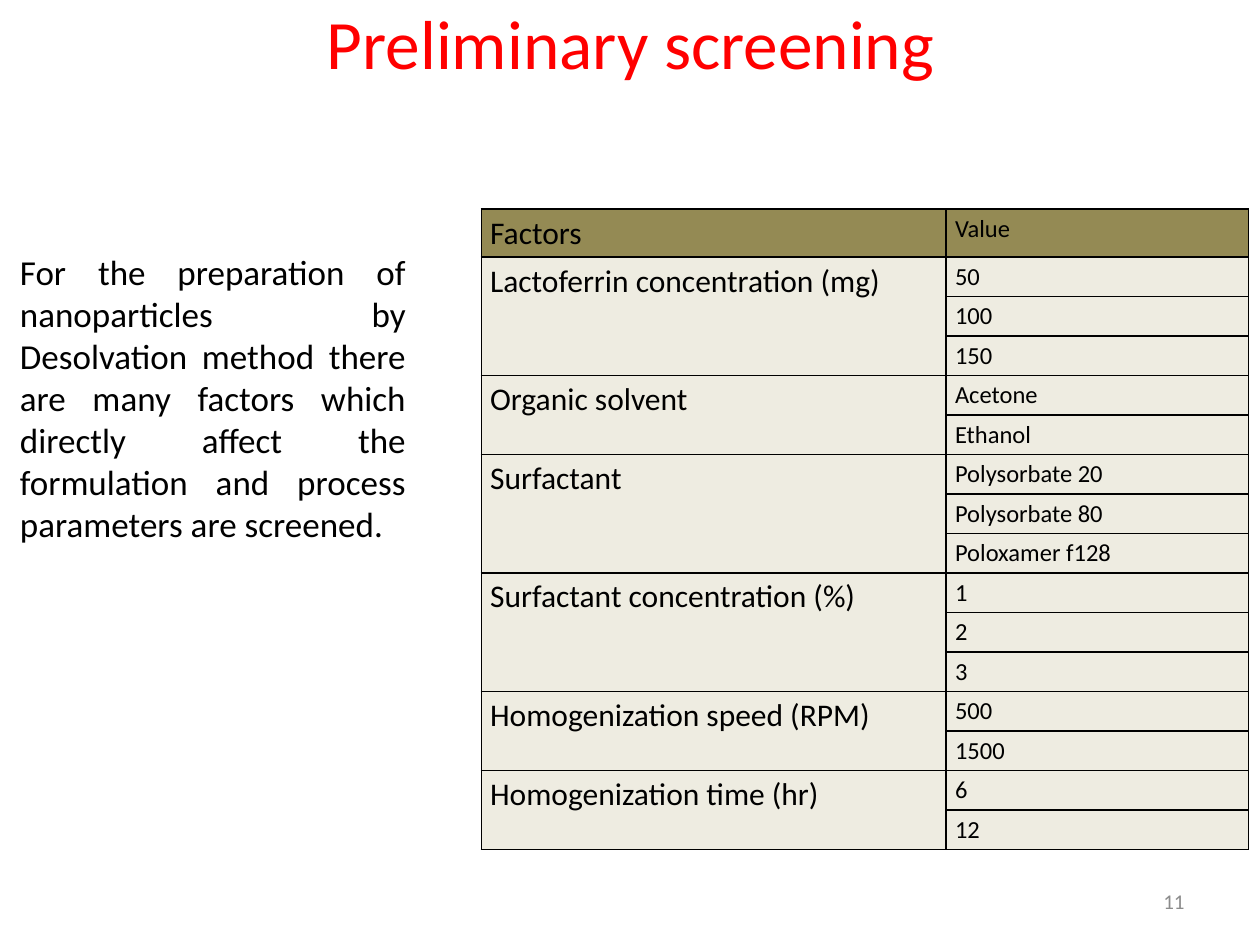
import pptx
import pptx.util
import pptx.dml.color
import pptx.enum.text
import pptx.oxml
import pptx.oxml.ns
from lxml import etree

Inches, Pt = pptx.util.Inches, pptx.util.Pt
RGBColor = pptx.dml.color.RGBColor
PP_ALIGN, MSO_ANCHOR = pptx.enum.text.PP_ALIGN, pptx.enum.text.MSO_ANCHOR
qn = pptx.oxml.ns.qn

RED = RGBColor(0xFF, 0x00, 0x00)
BLACK = RGBColor(0x00, 0x00, 0x00)
GREY = RGBColor(0x8C, 0x8C, 0x8C)
OLIVE = RGBColor(0x94, 0x8A, 0x54)
CREAM = RGBColor(0xEE, 0xEC, 0xE1)

COLS = [3.69, 2.4]
HEAD_ROW, ROW = 0.38, 0.31
FACTORS = [
    ("Lactoferrin concentration (mg)", ["50", "100", "150"]),
    ("Organic solvent", ["Acetone", "Ethanol"]),
    ("Surfactant", ["Polysorbate 20", "Polysorbate 80", "Poloxamer f128"]),
    ("Surfactant concentration (%)", ["1", "2", "3"]),
    ("Homogenization speed (RPM)", ["500", "1500"]),
    ("Homogenization time (hr)", ["6", "12"]),
]


def write(tf, text, size, color, align=PP_ALIGN.LEFT):
    tf.word_wrap = True
    p = tf.paragraphs[0]
    p.alignment = align
    r = p.add_run()
    r.text = text
    r.font.name = "Calibri"
    r.font.size = Pt(size)
    r.font.color.rgb = color


def style_cell(cell, fill):
    cell.margin_left = cell.margin_right = Inches(0.07)
    cell.margin_top = cell.margin_bottom = Inches(0.04)
    tcPr = cell._tc.get_or_add_tcPr()
    for side in ("a:lnL", "a:lnR", "a:lnT", "a:lnB"):
        ln = etree.SubElement(tcPr, qn(side), w=str(Pt(1)))
        solid = etree.SubElement(ln, qn("a:solidFill"))
        etree.SubElement(solid, qn("a:srgbClr"), val=str(BLACK))
    cell.fill.solid()
    cell.fill.fore_color.rgb = fill


prs = pptx.Presentation()
prs.slide_width, prs.slide_height = Inches(10), Inches(7.5)
s = prs.slides.add_slide(prs.slide_layouts[5])

# Title
sp = s.shapes.title
sp.left, sp.top, sp.width, sp.height = Inches(1.35), Inches(0.01), Inches(7.31), Inches(0.65)
tf = sp.text_frame
tf.auto_size = pptx.enum.text.MSO_AUTO_SIZE.NONE
tf.vertical_anchor = MSO_ANCHOR.MIDDLE
write(tf, "Preliminary screening", 39.6, RED, PP_ALIGN.CENTER)

# Explanation
sp = s.shapes.add_textbox(Inches(0.06), Inches(1.94), Inches(3.26), Inches(2.6))
write(sp.text_frame,
      "For the preparation of nanoparticles by Desolvation method there are many "
      "factors which directly affect the formulation and process parameters are screened.",
      20, BLACK, PP_ALIGN.JUSTIFY)

# Factor table
n_values = sum(len(values) for _, values in FACTORS)
table = s.shapes.add_table(n_values + 1, len(COLS), Inches(3.82), Inches(1.66),
                           Inches(sum(COLS)), Inches(HEAD_ROW + n_values * ROW)).table
for col, width in zip(table.columns, COLS):
    col.width = Inches(width)
for i, row in enumerate(table.rows):
    row.height = Inches(ROW if i else HEAD_ROW)
    for cell in row.cells:
        style_cell(cell, CREAM if i else OLIVE)

top = 0
for factor, values in [("Factors", ["Value"])] + FACTORS:
    if len(values) > 1:
        table.cell(top, 0).merge(table.cell(top + len(values) - 1, 0))
    write(table.cell(top, 0).text_frame, factor, 18, BLACK)
    for i, value in enumerate(values):
        write(table.cell(top + i, 1).text_frame, value, 14, BLACK)
    top += len(values)

# Slide number
sp = s.shapes.add_textbox(Inches(7.17), Inches(6.95), Inches(2.33), Inches(0.4))
sp.text_frame.vertical_anchor = MSO_ANCHOR.MIDDLE
write(sp.text_frame, "11", 12, GREY, PP_ALIGN.RIGHT)

prs.save("out.pptx")
